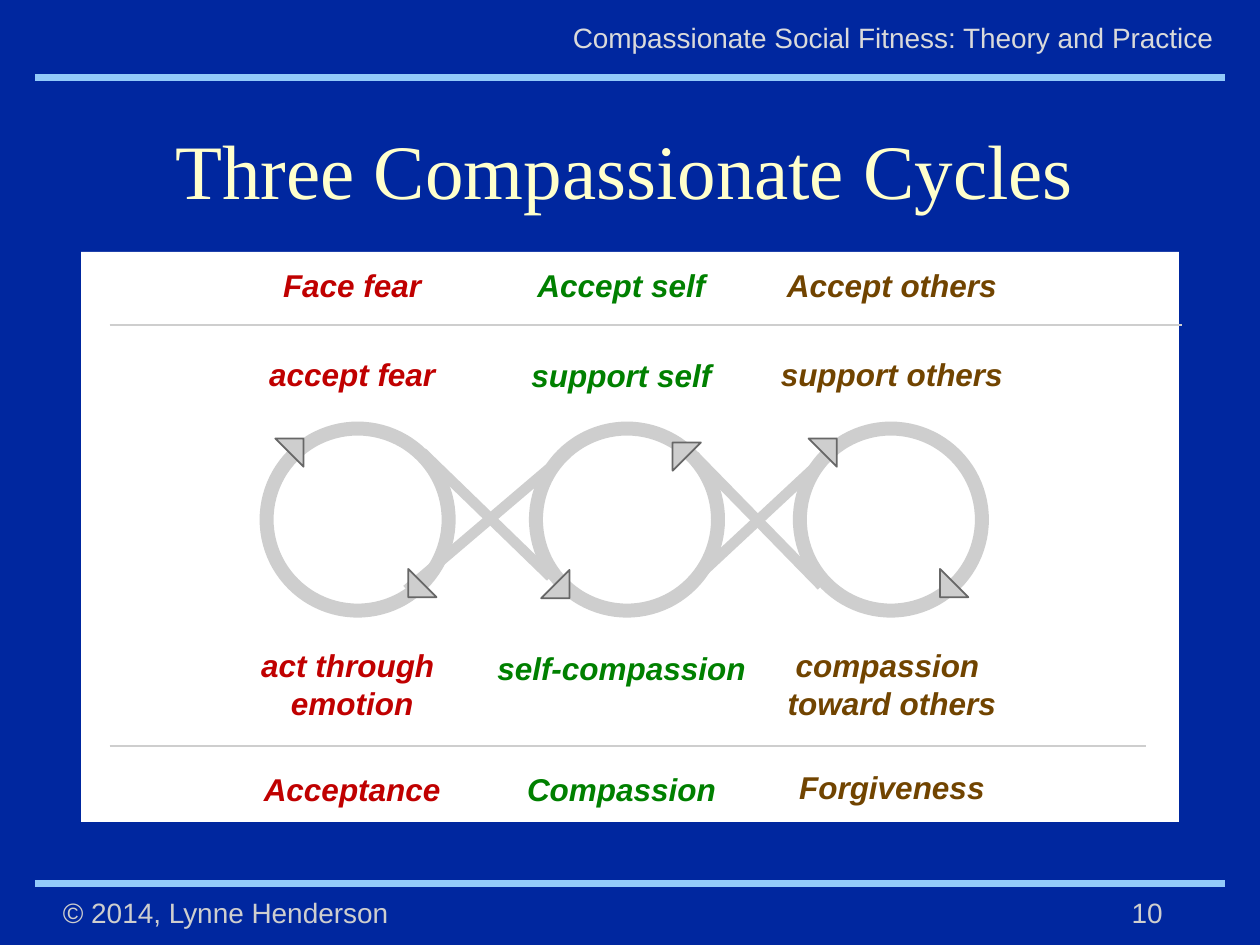
from dataclasses import dataclass

from lxml.etree import SubElement
from pptx import Presentation
from pptx.dml.color import RGBColor
from pptx.enum.shapes import MSO_CONNECTOR, MSO_SHAPE
from pptx.enum.text import MSO_ANCHOR, MSO_AUTO_SIZE, PP_ALIGN
from pptx.oxml import parse_xml
from pptx.oxml.ns import nsdecls, qn
from pptx.util import Cm, Pt

NAVY, SKY, WHITE, CREAM = "00279F", "92CAFA", "FFFFFF", "FFFFCC"
GREY, PALE_GREY, DARK_GREY = "CECECE", "DADADA", "676767"
RED, GREEN, BROWN = "C00000", "008000", "714400"

RING_TOP, RING_SIZE, ARROW_SIZE = 8.64, 3.67, 0.57
LINE_HEIGHT, PADDING = 0.76, 0.25


@dataclass(frozen=True)
class Label:
    text: str
    top: float
    width: float


@dataclass(frozen=True)
class Arrow:
    """A right triangle: its square corner and the way its legs point."""
    x: float
    y: float
    across: int
    down: int


@dataclass(frozen=True)
class Cycle:
    color: str
    label_center: float
    ring_center: float
    labels: tuple[Label, ...]
    arrows: tuple[Arrow, ...]
    crossing: tuple[tuple[float, float, float, float], ...] = ()


CYCLES = (
    Cycle(RED, 7.1, 7.21,
          (Label("Face fear", 5.23, 3.45), Label("accept fear", 7.04, 4.04),
           Label("act through \nemotion", 12.9, 4.17), Label("Acceptance", 15.39, 4.11)),
          (Arrow(8.23, 12.04, 1, -1), Arrow(6.12, 8.84, -1, 1)),
          ((8.51, 9.12, 11.1, 11.63), (11.43, 9.14, 8.2, 11.89))),
    Cycle(GREEN, 12.53, 12.64,
          (Label("Accept self", 5.23, 3.94), Label("support self", 7.06, 4.32),
           Label("self-compassion", 12.95, 5.69), Label("Compassion", 15.39, 4.37)),
          (Arrow(11.48, 12.06, -1, -1), Arrow(13.56, 8.92, 1, 1)),
          ((14, 9.19, 16.56, 11.81), (16.61, 9.25, 14, 11.68))),
    Cycle(BROWN, 17.98, 17.96,
          (Label("Accept others", 5.23, 4.95), Label("support others", 7.04, 5.16),
           Label("compassion \ntoward others", 12.9, 4.88), Label("Forgiveness", 15.36, 4.42)),
          (Arrow(18.95, 12.04, 1, -1), Arrow(16.87, 8.84, -1, 1))),
)


def rgb(color: str) -> RGBColor:
    return RGBColor.from_string(color)


def paint(shape, fill: str | None = None, line: str | None = None, weight: float = 1) -> None:
    shape.shadow.inherit = False
    if fill:
        shape.fill.solid()
        shape.fill.fore_color.rgb = rgb(fill)
    else:
        shape.fill.background()
    if line:
        shape.line.color.rgb = rgb(line)
        shape.line.width = Pt(weight)
    else:
        shape.line.fill.background()


def add_figure(slide, kind, left: float, top: float, width: float, height: float, **style) -> None:
    shape = slide.shapes.add_shape(kind, Cm(left), Cm(top), Cm(width), Cm(height))
    paint(shape, **style)


def add_line(slide, x1: float, y1: float, x2: float, y2: float, color: str, weight: float) -> None:
    line = slide.shapes.add_connector(MSO_CONNECTOR.STRAIGHT, Cm(x1), Cm(y1), Cm(x2), Cm(y2))
    line.line.color.rgb = rgb(color)
    line.line.width = Pt(weight)
    SubElement(line._element.spPr, qn("a:effectLst"))


def add_arrow(slide, arrow: Arrow) -> None:
    tip_x = Cm(arrow.x + arrow.across * ARROW_SIZE)
    tip_y = Cm(arrow.y + arrow.down * ARROW_SIZE)
    builder = slide.shapes.build_freeform(Cm(arrow.x), tip_y)
    builder.add_line_segments([(Cm(arrow.x), Cm(arrow.y)), (tip_x, Cm(arrow.y))], close=True)
    paint(builder.convert_to_shape(), GREY, DARK_GREY)


def add_text(slide, text: str, left: float, top: float, width: float, height: float,
             color: str, size: float = 16, align=PP_ALIGN.LEFT, font: str = "Arial",
             emphasis: bool = False, wrap: bool = False):
    box = slide.shapes.add_textbox(Cm(left), Cm(top), Cm(width), Cm(height))
    frame = box.text_frame
    frame.word_wrap = wrap
    frame.auto_size = MSO_AUTO_SIZE.SHAPE_TO_FIT_TEXT
    paragraph = frame.paragraphs[0]
    paragraph.text = text
    paragraph.alignment = align
    paragraph.font.name = font
    paragraph.font.size = Pt(size)
    paragraph.font.color.rgb = rgb(color)
    paragraph.font.bold = paragraph.font.italic = emphasis
    return frame


def add_title(slide, text: str) -> None:
    frame = add_text(slide, text, 1.7, 2.34, 21.79, 2.11, CREAM, 44,
                     PP_ALIGN.CENTER, "Times New Roman", wrap=True)
    frame.auto_size = MSO_AUTO_SIZE.NONE
    frame.vertical_anchor = MSO_ANCHOR.BOTTOM
    run_properties = frame.paragraphs[0].runs[0]._r.get_or_add_rPr()
    run_properties.append(parse_xml(
        f'<a:effectLst {nsdecls("a")}><a:outerShdw blurRad="38100" dist="38100" dir="2700000">'
        '<a:srgbClr val="000000"/></a:outerShdw></a:effectLst>'))


def add_label(slide, label: Label, center: float, color: str) -> None:
    height = LINE_HEIGHT * (label.text.count("\n") + 1) + PADDING
    add_text(slide, label.text, center - label.width / 2, label.top, label.width, height,
             color, 18, PP_ALIGN.CENTER, emphasis=True)


def add_cycle(slide, cycle: Cycle) -> None:
    for ends in cycle.crossing:
        add_line(slide, *ends, GREY, 6)
    add_figure(slide, MSO_SHAPE.OVAL, cycle.ring_center - RING_SIZE / 2, RING_TOP,
               RING_SIZE, RING_SIZE, line=GREY, weight=8)
    for arrow in cycle.arrows:
        add_arrow(slide, arrow)


def main() -> None:
    deck = Presentation()
    deck.slide_width, deck.slide_height = Cm(25.4), Cm(19.05)
    slide = deck.slides.add_slide(deck.slide_layouts[6])
    slide.background.fill.solid()
    slide.background.fill.fore_color.rgb = rgb(NAVY)

    # Header and footer
    for y in (1.57, 17.81):
        add_line(slide, 0.71, y, 24.69, y, SKY, 4)
    add_text(slide, "© 2014, Lynne Henderson", 1.02, 17.93, 7.14, 0.94, GREY)
    add_text(slide, "Compassionate Social Fitness: Theory and Practice",
             10.77, 0.28, 13.94, 0.94, PALE_GREY, align=PP_ALIGN.RIGHT, wrap=True)
    add_text(slide, "10", 22.5, 17.93, 1.19, 0.94, GREY, align=PP_ALIGN.RIGHT)

    # Panel and title
    add_figure(slide, MSO_SHAPE.RECTANGLE, 1.63, 5.08, 22.43, 11.63, fill=WHITE)
    add_title(slide, "Three Compassionate Cycles")
    add_figure(slide, MSO_SHAPE.RECTANGLE, 1.45, 4.83, 22.5, 11.91, line=NAVY, weight=10)

    # Linked cycles
    for cycle in CYCLES:
        add_cycle(slide, cycle)

    # Dividers
    for right, y in ((23.83, 6.55), (23.11, 15.04)):
        add_line(slide, 2.21, y, right, y, GREY, 1)

    # Labels above and below each cycle
    for cycle in CYCLES:
        for label in cycle.labels:
            add_label(slide, label, cycle.label_center, cycle.color)

    deck.save("out.pptx")


if __name__ == "__main__":
    main()
